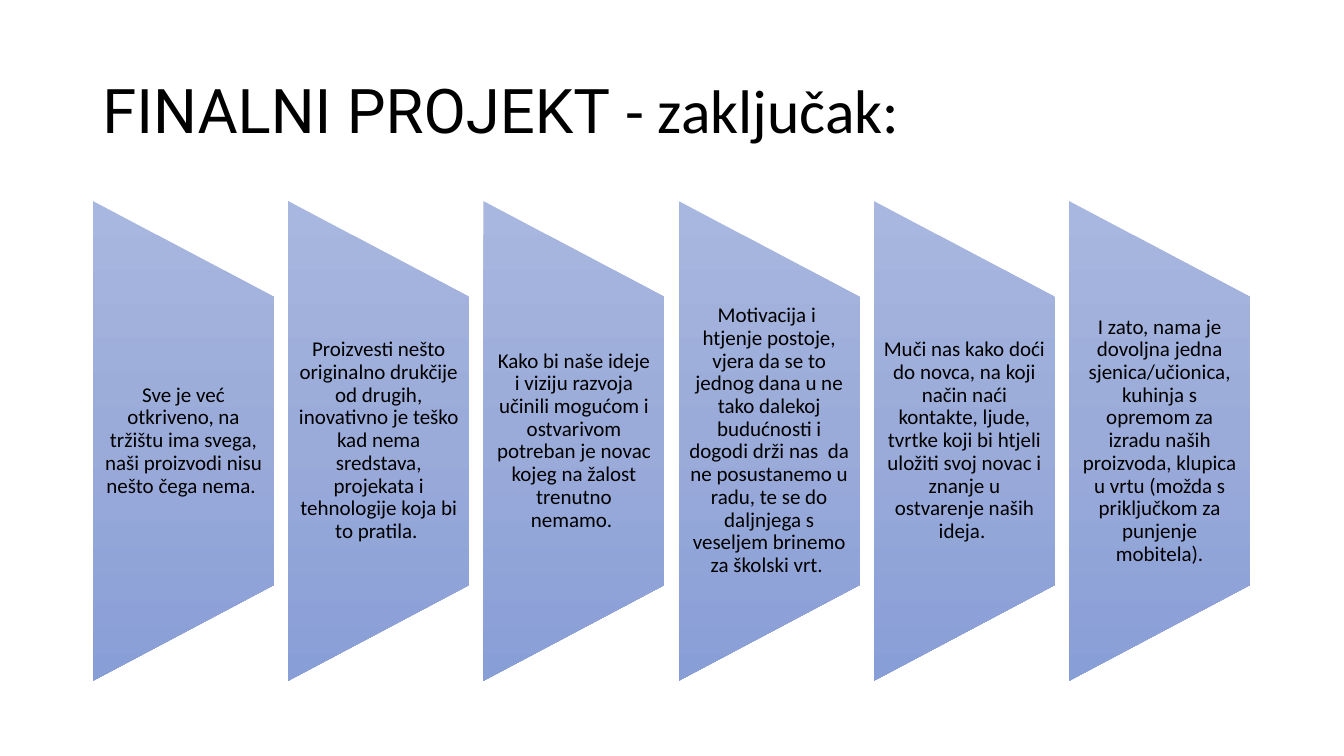
from lxml import etree
from pptx import Presentation
from pptx.dml.color import RGBColor
from pptx.enum.shapes import MSO_SHAPE
from pptx.enum.text import MSO_ANCHOR, PP_ALIGN
from pptx.oxml.ns import qn
from pptx.util import Cm, Pt

TRAPEZOID = MSO_SHAPE.FLOWCHART_MANUAL_OPERATION
MIDDLE = MSO_ANCHOR.MIDDLE
LEFT, CENTER = PP_ALIGN.LEFT, PP_ALIGN.CENTER

TITLE = [("FINALNI PROJEKT ", "Roboto"), ("- zaključak:", "Calibri")]
CONCLUSIONS = [
    "Sve je već otkriveno, na tržištu ima svega, naši proizvodi nisu nešto čega nema. ",
    "Proizvesti nešto originalno drukčije od drugih, inovativno je teško kad nema "
    "sredstava, projekata i tehnologije koja bi to pratila. ",
    "Kako bi naše ideje i viziju razvoja učinili mogućom i ostvarivom potreban je "
    "novac kojeg na žalost trenutno nemamo. ",
    "Motivacija i  htjenje postoje, vjera da se to jednog dana u ne tako dalekoj "
    "budućnosti i dogodi drži nas  da ne posustanemo u radu, te se do daljnjega s "
    "veseljem brinemo za školski vrt. ",
    "Muči nas kako doći do novca, na koji način naći kontakte, ljude, tvrtke koji bi "
    "htjeli uložiti svoj novac i znanje u ostvarenje naših ideja. ",
    "I zato, nama je dovoljna jedna sjenica/učionica, kuhinja s opremom za izradu "
    "naših proizvoda, klupica u vrtu (možda s priključkom za punjenje mobitela).",
]
COLORS = {"text": "000000", "top": "A8B7DF", "middle": "9AABD9", "bottom": "889ED7"}
GRADIENT = [(0, "top"), (50, "middle"), (100, "bottom")]
TITLE_FRAME = {"word_wrap": True, "vertical_anchor": MIDDLE}
PANEL_FRAME = {**TITLE_FRAME, "margin_left": Cm(0.25), "margin_right": Cm(0.25),
               "margin_top": 0, "margin_bottom": 0}

PANEL_LEFT, PANEL_PITCH, PANEL_WIDTH = 2.34, 4.92, 4.57
PANEL_CENTER_Y, PANEL_HEIGHT, TEXT_HEIGHT = 11.11, 12.09, 7.26


def apply(target, values):
    for name, value in values.items():
        setattr(target, name, value)


def add_text(shapes, box, runs, size, align, frame_format):
    frame = shapes.add_textbox(*map(Cm, box)).text_frame
    apply(frame, frame_format)
    paragraph = frame.paragraphs[0]
    apply(paragraph, {"alignment": align, "line_spacing": 0.9})
    for text, font_name in runs:
        run = paragraph.add_run()
        run.text = text
        apply(run.font, {"name": font_name, "size": Pt(size)})
        run.font.color.rgb = RGBColor.from_string(COLORS["text"])


def fill_gradient(shape):
    shape.fill.gradient()
    gradient = shape._element.spPr.find(qn("a:gradFill"))
    gradient.set("rotWithShape", "0")
    stops = gradient.find(qn("a:gsLst"))
    for stop in list(stops):
        stops.remove(stop)
    for position, color in GRADIENT:
        stop = etree.SubElement(stops, qn("a:gs"), pos=str(position * 1000))
        etree.SubElement(stop, qn("a:srgbClr"), val=COLORS[color])
    shape.fill.gradient_angle = 270


def add_panel(shapes, left, conclusion):
    center_x = left + PANEL_WIDTH / 2
    panel = shapes.add_shape(
        TRAPEZOID,
        Cm(center_x - PANEL_HEIGHT / 2), Cm(PANEL_CENTER_Y - PANEL_WIDTH / 2),
        Cm(PANEL_HEIGHT), Cm(PANEL_WIDTH))
    panel.rotation = 270
    panel.shadow.inherit = False
    panel.line.fill.background()
    fill_gradient(panel)
    text_box = (left, PANEL_CENTER_Y - TEXT_HEIGHT / 2, PANEL_WIDTH, TEXT_HEIGHT)
    add_text(shapes, text_box, [(conclusion, "Calibri")], 15, CENTER, PANEL_FRAME)


def main():
    presentation = Presentation()
    apply(presentation, {"slide_width": Cm(33.87), "slide_height": Cm(19.05)})
    slide = presentation.slides.add_slide(presentation.slide_layouts[6])
    add_text(slide.shapes, (2.33, 1.01, 29.21, 3.68), TITLE, 44, LEFT, TITLE_FRAME)
    panels = slide.shapes.add_group_shape().shapes
    for index, conclusion in enumerate(CONCLUSIONS):
        add_panel(panels, PANEL_LEFT + index * PANEL_PITCH, conclusion)
    presentation.save("out.pptx")


if __name__ == "__main__":
    main()
